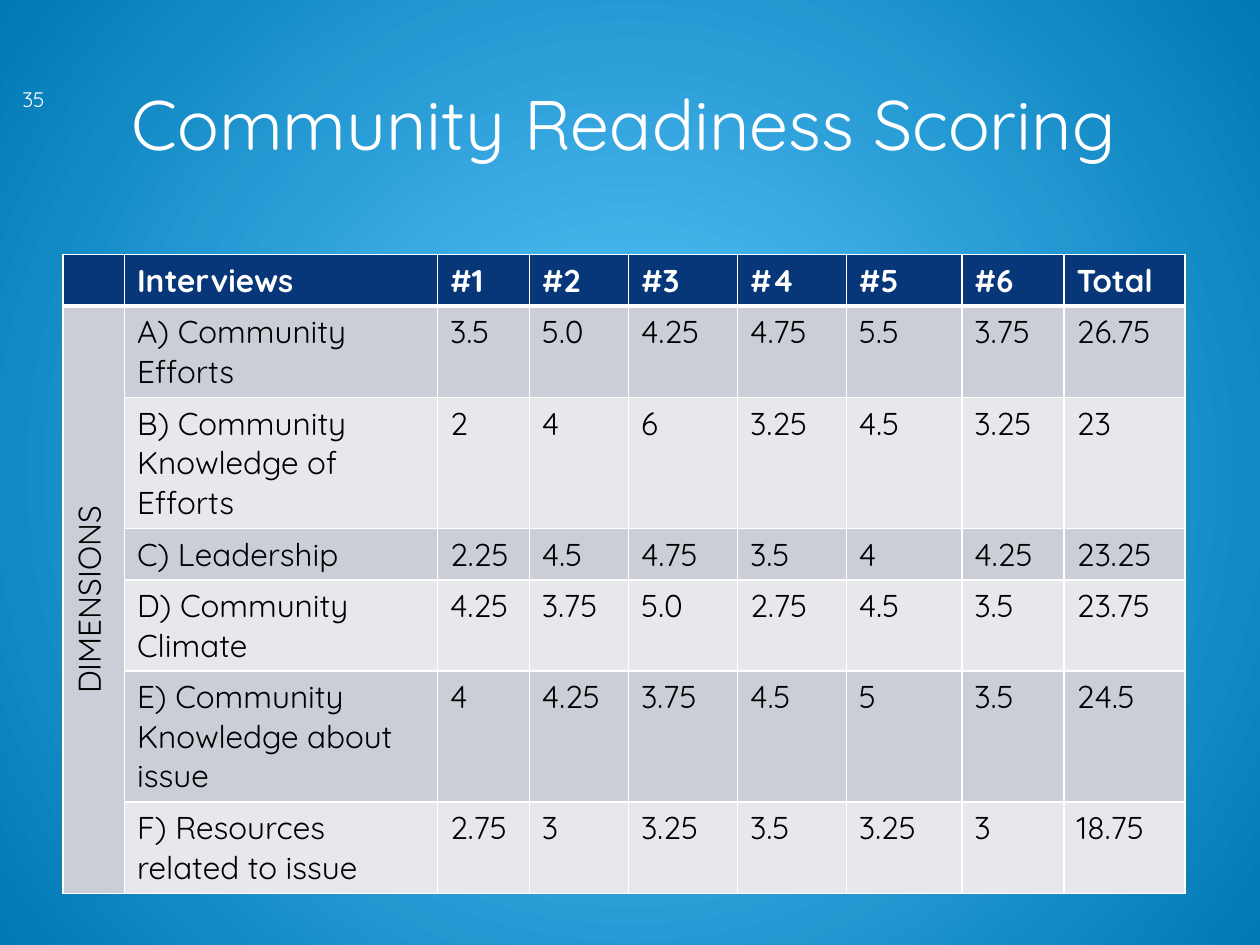
import lxml.etree
import pptx
import pptx.dml.color
import pptx.enum.text
import pptx.oxml
import pptx.oxml.ns
import pptx.util

Cm = pptx.util.Cm
Pt = pptx.util.Pt
qn = pptx.oxml.ns.qn
ALIGN = pptx.enum.text.PP_ALIGN
MIDDLE = pptx.enum.text.MSO_ANCHOR.MIDDLE

TITLE = "Community Readiness Scoring"
PAGE_NUMBER = "35"
SIDE_LABEL = "DIMENSIONS"
HEADER = ["Interviews", "#1", "#2", "#3", "#4", "#5", "#6", "Total"]
SCORES = [
    ("A) Community Efforts", 2, "3.5 5.0 4.25 4.75 5.5 3.75 26.75"),
    ("B) Community Knowledge of Efforts", 3, "2 4 6 3.25 4.5 3.25 23"),
    ("C) Leadership", 1, "2.25 4.5 4.75 3.5 4 4.25 23.25"),
    ("D) Community Climate", 2, "4.25 3.75 5.0 2.75 4.5 3.5 23.75"),
    ("E) Community Knowledge about issue", 3, "4 4.25 3.75 4.5 5 3.5 24.5"),
    ("F) Resources related to issue", 2, "2.75 3 3.25 3.5 3.25 3 18.75"),
]

THEME = {
    "font": "Quicksand",
    "glow": "5DC9FF",
    "edge": "0079B5",
    "light": "FFFFFF",
    "dark": "000000",
    "header": "073779",
    "bands": ("CCCED7", "E7E8EC"),
    "title_size": 40,
    "table_size": 18,
    "number_size": 12,
}

TABLE_LEFT, TABLE_TOP = 1.27, 5.13
COLUMN_WIDTHS = [1.24, 6.31, 1.85, 2.0, 2.2, 2.19, 2.33, 2.06, 2.44]
ONE_LINE_ROW, EXTRA_LINE = 1.04, 0.8
THIN, THICK = 1, 3


def rgb(value):
    return pptx.dml.color.RGBColor.from_string(value)


def write(frame, text, size, color, bold=False, **paragraph_format):
    paragraph = frame.paragraphs[0]
    paragraph.text = text
    for name, value in paragraph_format.items():
        setattr(paragraph, name, value)
    font = paragraph.runs[0].font
    for name, value in {"name": THEME["font"], "size": Pt(size), "bold": bold}.items():
        setattr(font, name, value)
    font.color.rgb = rgb(color)


def add_text(slide, box, text, size, **paragraph_format):
    shape = slide.shapes.add_textbox(*(Cm(length) for length in box))
    for name, value in {"word_wrap": True, "vertical_anchor": MIDDLE}.items():
        setattr(shape.text_frame, name, value)
    write(shape.text_frame, text, size, THEME["light"], **paragraph_format)


def paint_background(slide):
    fill = slide.background.fill
    fill.gradient()
    for stop, color in zip(fill.gradient_stops, (THEME["glow"], THEME["edge"])):
        stop.color.rgb = rgb(color)
    gradient = slide.background._cSld.find(".//" + qn("a:gradFill"))
    gradient.remove(gradient.find(qn("a:lin")))
    circle = lxml.etree.SubElement(gradient, qn("a:path"), path="circle")
    sides = dict.fromkeys("ltrb", "50000")
    lxml.etree.SubElement(circle, qn("a:fillToRect"), **sides)


def style_cell(cell, fill, top=THIN, bottom=THIN):
    properties = cell._tc.get_or_add_tcPr()
    for side, width in {"L": THIN, "R": THIN, "T": top, "B": bottom}.items():
        line = lxml.etree.SubElement(properties, qn("a:ln" + side), w=str(Pt(width)))
        solid = lxml.etree.SubElement(line, qn("a:solidFill"))
        lxml.etree.SubElement(solid, qn("a:srgbClr"), val=THEME["light"])
    cell.fill.solid()
    cell.fill.fore_color.rgb = rgb(fill)


def add_scores(slide):
    line_counts = [1] + [lines for _, lines, _ in SCORES]
    heights = [ONE_LINE_ROW + EXTRA_LINE * (lines - 1) for lines in line_counts]
    rows = [[""] + HEADER]
    rows += [["", label] + values.split() for label, _, values in SCORES]
    rows[1][0] = SIDE_LABEL
    table = slide.shapes.add_table(
        len(rows), len(COLUMN_WIDTHS), Cm(TABLE_LEFT), Cm(TABLE_TOP),
        Cm(sum(COLUMN_WIDTHS)), Cm(sum(heights))).table
    for column, width in zip(table.columns, COLUMN_WIDTHS):
        column.width = Cm(width)
    for row, height in zip(table.rows, heights):
        row.height = Cm(height)

    for row_index, texts in enumerate(rows):
        is_header = row_index == 0
        for column_index, text in enumerate(texts):
            cell = table.cell(row_index, column_index)
            band = 0 if column_index == 0 else (row_index - 1) % 2
            style_cell(cell, THEME["header"] if is_header else THEME["bands"][band],
                       top=THICK if row_index == 1 else THIN,
                       bottom=THICK if is_header else THIN)
            if text:
                write(cell.text_frame, text, THEME["table_size"],
                      THEME["light" if is_header else "dark"], bold=is_header)

    side_cell = table.cell(1, 0)
    side_cell.merge(table.cell(len(SCORES), 0))
    side_cell._tc.get_or_add_tcPr().set("vert", "vert270")
    side_cell.text_frame.paragraphs[0].alignment = ALIGN.CENTER


def main():
    presentation = pptx.Presentation()
    presentation.slide_width, presentation.slide_height = Cm(25.4), Cm(19.05)
    slide = presentation.slides.add_slide(presentation.slide_layouts[6])
    paint_background(slide)
    add_text(slide, (1.27, 0.74, 22.61, 3.18), TITLE, THEME["title_size"],
             alignment=ALIGN.CENTER, line_spacing=Pt(56))
    add_scores(slide)
    add_text(slide, (0.2, 1.68, 3.86, 0.64), PAGE_NUMBER, THEME["number_size"])
    presentation.save("out.pptx")


if __name__ == "__main__":
    main()
